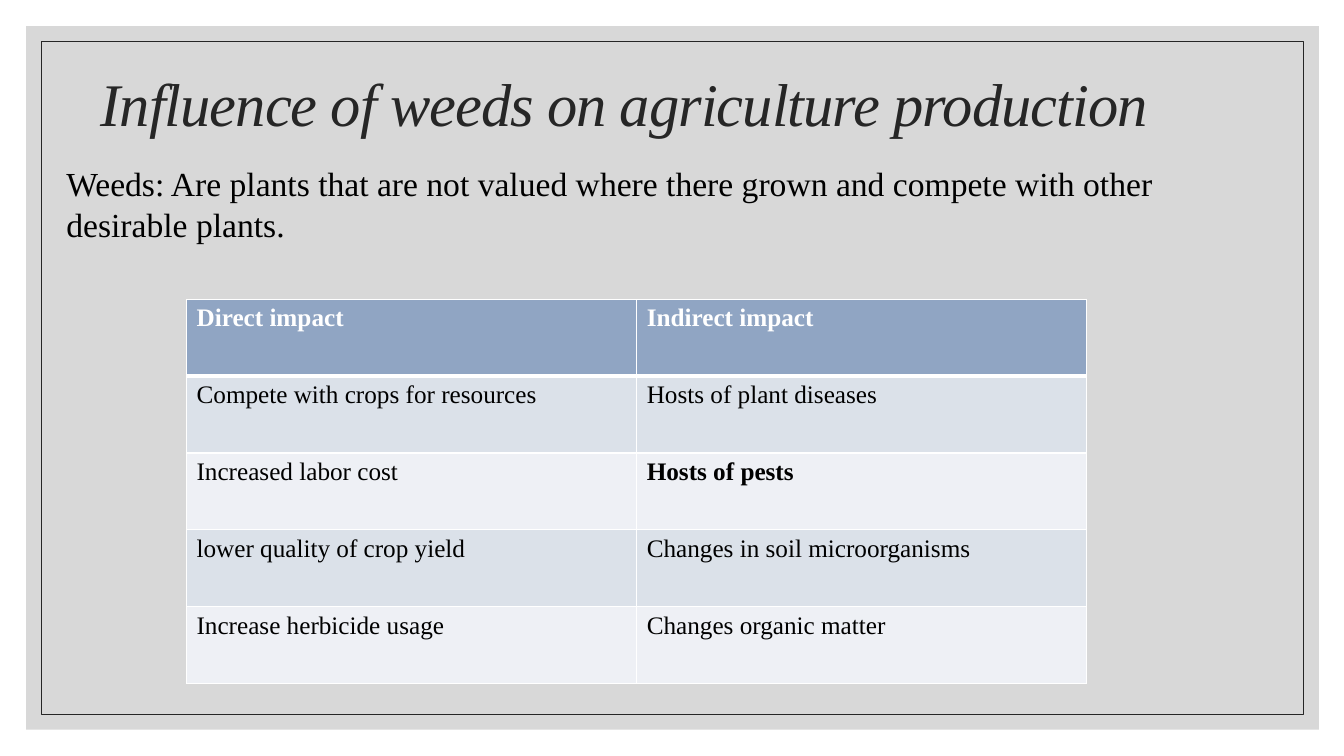
import pptx
import pptx.util
import pptx.dml.color
import pptx.enum.shapes
import pptx.enum.text
import pptx.oxml.ns
from lxml import etree
from pptx.util import Inches


def color(code):
    return pptx.dml.color.RGBColor.from_string(code)


def add(node, tag, **attrs):
    return etree.SubElement(node, pptx.oxml.ns.qn(tag), **attrs)


class Deck:
    font = "Times New Roman"
    white, black, dark, gray = "FFFFFF", "000000", "262626", "BFBFBF"
    head, bands = "90A5C3", ("DBE1E9", "EEF0F5")

    def __init__(self):
        self.file = pptx.Presentation()
        self.file.slide_width = Inches(13.33)
        self.file.slide_height = Inches(7.5)
        self.slide = self.file.slides.add_slide(self.file.slide_layouts[6])

    def style(self, frame, size, code, bold=False, italic=False):
        for run in frame.paragraphs[0].runs:
            run.font.name = self.font
            run.font.size = pptx.util.Pt(size)
            run.font.color.rgb = color(code)
            run.font.bold = bold
            run.font.italic = italic

    def panel(self, box, fill=None, alpha=100, line=None):
        kind = pptx.enum.shapes.MSO_SHAPE.RECTANGLE
        shape = self.slide.shapes.add_shape(kind, *map(Inches, box))
        shape.shadow.inherit = False
        if fill:
            shape.fill.solid()
            shape.fill.fore_color.rgb = color(fill)
            tint = shape.fill._xPr.find(".//" + pptx.oxml.ns.qn("a:srgbClr"))
            add(tint, "a:alpha", val=str(alpha * 1000))
        else:
            shape.fill.background()
        if line:
            shape.line.color.rgb = color(line)
            shape.line.width = pptx.util.Pt(0.5)
        else:
            shape.line.fill.background()

    def text(self, box, words, size, code, italic=False):
        frame = self.slide.shapes.add_textbox(*map(Inches, box)).text_frame
        frame.word_wrap = True
        frame.text = words
        self.style(frame, size, code, italic=italic)
        return frame

    def title(self, box, words):
        frame = self.text(box, words, 43.2, self.dark, italic=True)
        frame.vertical_anchor = pptx.enum.text.MSO_ANCHOR.MIDDLE
        para = frame.paragraphs[0]
        para.line_spacing = 0.9
        para.runs[0].font._element.set("spc", "-70")

    def edge(self, cell, side, width):
        props = cell._tc.get_or_add_tcPr()
        line = add(props, "a:ln" + side, w=str(pptx.util.Pt(width)))
        add(add(line, "a:solidFill"), "a:srgbClr", val=self.white)

    def table(self, box, rows, strong):
        grid = self.slide.shapes.add_table(
            len(rows), len(rows[0]), *map(Inches, box)).table
        grid.horz_banding = False
        for r, row in enumerate(rows):
            for c, words in enumerate(row):
                cell = grid.cell(r, c)
                for side in "LRTB":
                    thick = (r, side) in ((0, "B"), (1, "T"))
                    self.edge(cell, side, 3 if thick else 1)
                cell.fill.solid()
                fill = self.bands[(r - 1) % 2] if r else self.head
                cell.fill.fore_color.rgb = color(fill)
                cell.text_frame.text = words
                self.style(cell.text_frame, 18,
                           self.black if r else self.white,
                           bold=r == 0 or words in strong)


def main():
    deck = Deck()
    deck.panel((0.26, 0.26, 12.82, 6.98), fill=deck.gray, alpha=60)
    deck.panel((0.41, 0.41, 12.52, 6.68), line=deck.dark)
    deck.title((0.9, 0.56, 11, 1.01),
               "Influence of weeds on agriculture production")
    deck.table((1.85, 2.97, 8.93, 3.81), [
        ("Direct impact", "Indirect impact"),
        ("Compete with crops for resources", "Hosts of plant diseases"),
        ("Increased labor cost", "Hosts of pests"),
        ("lower quality of crop yield", "Changes in soil microorganisms"),
        ("Increase herbicide usage", "Changes organic matter"),
    ], strong={"Hosts of pests"})
    deck.text((0.56, 1.57, 10.99, 0.91),
              "Weeds: Are plants that are not valued where there grown "
              "and compete with other desirable plants.", 24, deck.black)
    deck.file.save("out.pptx")


if __name__ == "__main__":
    main()
